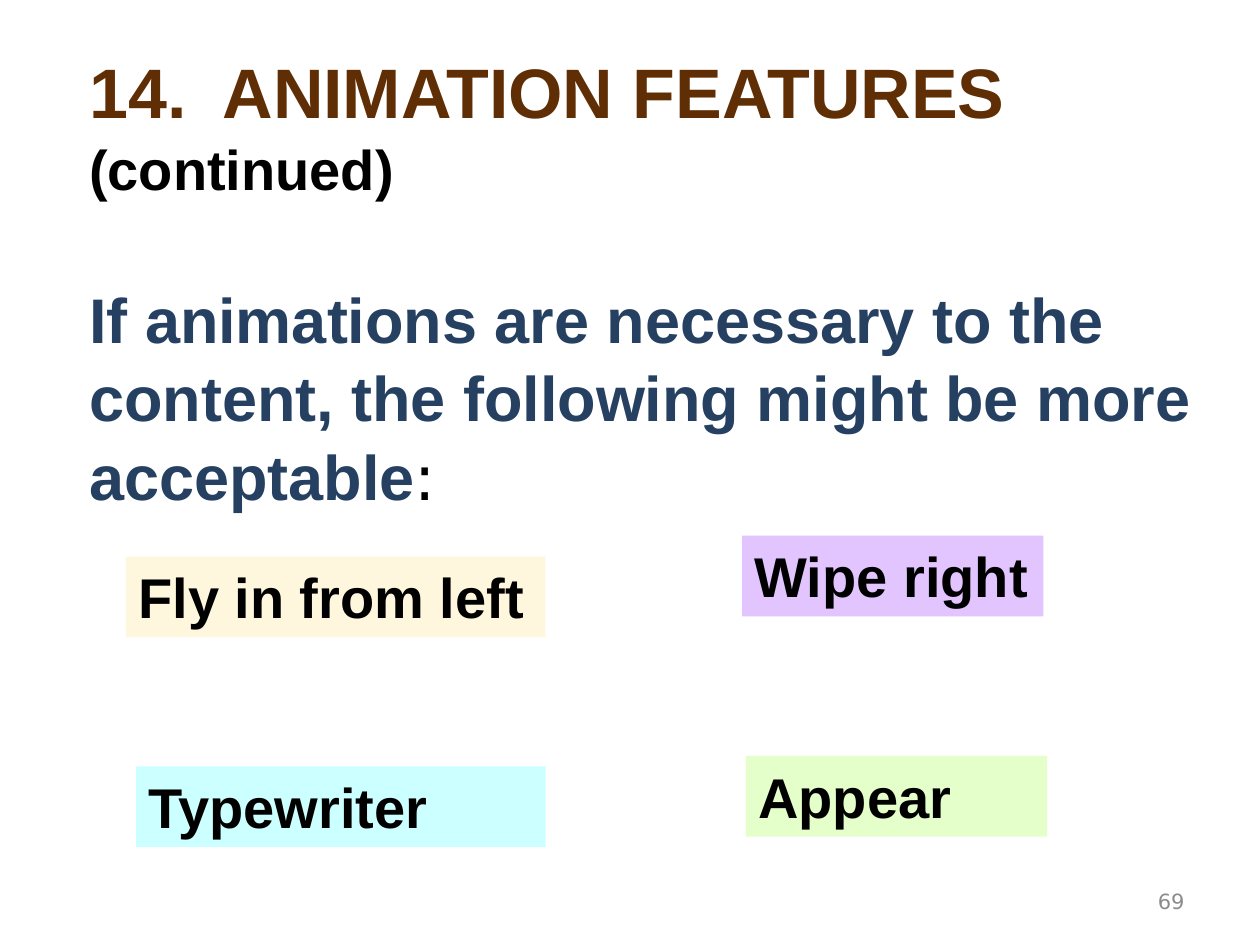
"""Build the slide on acceptable animation features."""
from pptx import Presentation
from pptx.dml.color import RGBColor
from pptx.enum.shapes import MSO_SHAPE
from pptx.enum.text import MSO_ANCHOR, PP_ALIGN
from pptx.util import Inches, Pt

WIDTH, HEIGHT = 10, 7.5
COLORS = {
    "brown": "602E04", "navy": "254061", "black": "000000", "gray": "8C8C8C",
    "cream": "FFF7DD", "cyan": "CCFFFF", "lilac": "E2C5FF", "lime": "E4FFC9",
}
STYLES = {
    "title": ("brown", {"name": "Arial", "size": Pt(40), "bold": True}),
    "label": ("black", {"name": "Arial", "size": Pt(32), "bold": True}),
    "lead": ("navy", {"name": "Arial", "size": Pt(36), "bold": True}),
    "colon": ("black", {"name": "DejaVu Sans", "size": Pt(36), "bold": False}),
    "number": ("gray", {"name": "DejaVu Sans", "size": Pt(12), "bold": False}),
}
HEADING = [
    ({"line_spacing": 1.04},
     [("14.  ANIMATION FEATURES ", "title"), ("(continued)", "label")]),
    ({"line_spacing": 1.04, "space_before": Pt(43)},
     [("If animations are necessary to the content, "
       "the following might be more acceptable", "lead"), (":", "colon")]),
]
PAGE_NUMBER = [({"alignment": PP_ALIGN.RIGHT}, [("69", "number")])]
LABEL_HEIGHT = 0.64 / HEIGHT
LABELS = [
    ("Fly in from left", "cream", (0.1, 0.589, 0.333), True),
    ("Typewriter", "cyan", (0.108, 0.811, 0.325), True),
    ("Wipe right", "lilac", (0.589, 0.567, 0.239), False),
    ("Appear", "lime", (0.592, 0.8, 0.239), True),
]


def place(left, top, width, height):
    """Turn shares of the slide into lengths."""
    return [Inches(share * side) for share, side in
            zip((left, top, width, height), (WIDTH, HEIGHT) * 2)]


def apply(target, values):
    """Set each named attribute on the target."""
    for name, value in values.items():
        setattr(target, name, value)


def write(box, paragraphs, wrap=True, anchor=MSO_ANCHOR.TOP):
    """Fill a box with styled paragraphs."""
    frame = box.text_frame
    apply(frame, {"word_wrap": wrap, "vertical_anchor": anchor})
    for index, (layout, spans) in enumerate(paragraphs):
        para = frame.add_paragraph() if index else frame.paragraphs[0]
        apply(para, {"alignment": PP_ALIGN.LEFT, **layout})
        for text, style in spans:
            span = para.add_run()
            span.text = text
            color, font = STYLES[style]
            apply(span.font, font)
            span.font.color.rgb = RGBColor.from_string(COLORS[color])


def main():
    """Assemble and save the deck."""
    deck = Presentation()
    apply(deck, {"slide_width": Inches(WIDTH), "slide_height": Inches(HEIGHT)})
    page = deck.slides.add_slide(deck.slide_layouts[6])
    write(page.shapes.add_textbox(*place(0.061, 0.041, 0.906, 0.516)), HEADING)
    for text, color, spot, wrap in LABELS:
        box = page.shapes.add_shape(MSO_SHAPE.RECTANGLE, *place(*spot, LABEL_HEIGHT))
        box.shadow.inherit = False
        box.fill.solid()
        box.fill.fore_color.rgb = RGBColor.from_string(COLORS[color])
        box.line.fill.background()
        write(box, [({}, [(text, "label")])], wrap)
    number = page.shapes.add_textbox(*place(0.717, 0.927, 0.233, 0.053))
    write(number, PAGE_NUMBER, anchor=MSO_ANCHOR.MIDDLE)
    deck.save("out.pptx")


if __name__ == "__main__":
    main()
